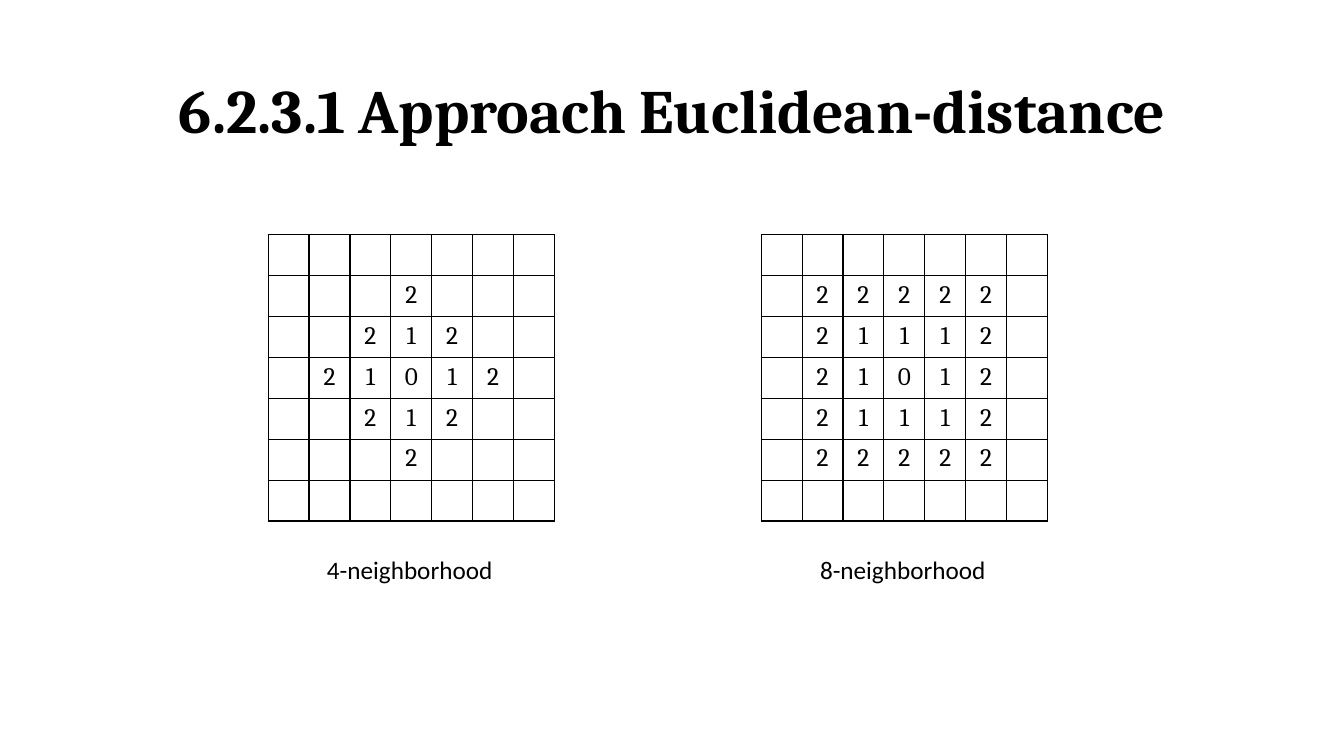
from lxml.etree import SubElement
from pptx import Presentation
from pptx.dml.color import RGBColor
from pptx.enum.text import MSO_ANCHOR, PP_ALIGN
from pptx.oxml.ns import qn
from pptx.util import Inches, Pt

TITLE = "6.2.3.1 Approach Euclidean-distance"
# One string per row, one sign per cell; a dot is an empty cell.
GRIDS = [
    ("4-neighborhood", 2.66, [
        ".......",
        "...2...",
        "..212..",
        ".21012.",
        "..212..",
        "...2...",
        ".......",
    ]),
    ("8-neighborhood", 7.55, [
        ".......",
        ".22222.",
        ".21112.",
        ".21012.",
        ".21112.",
        ".22222.",
        ".......",
    ]),
]
COLORS = {"ink": "000000", "back": "FFFFFF"}
TOP, SIDE = 2.33, 2.84
LABEL_W, LABEL_H, LABEL_GAP = 1.87, 0.4, 0.28


def style(para, font, size, bold=False):
    for run in para.runs:
        run.font.name = font
        run.font.size = Pt(size)
        run.font.bold = bold
        run.font.color.rgb = RGBColor.from_string(COLORS["ink"])


def frame(cell):
    """Give the cell a thin line on all four sides and no fill."""
    props = cell._tc.get_or_add_tcPr()
    for side in ("a:lnL", "a:lnR", "a:lnT", "a:lnB"):
        line = SubElement(props, qn(side), w=str(Pt(1)))
        fill = SubElement(line, qn("a:solidFill"))
        SubElement(fill, qn("a:srgbClr"), val=COLORS["ink"])
    cell.fill.background()


def add_grid(slide, left, rows):
    count = len(rows)
    table = slide.shapes.add_table(
        count, count, Inches(left), Inches(TOP), Inches(SIDE), Inches(SIDE)).table
    table.first_row = table.horz_banding = False
    for r, row in enumerate(rows):
        for c, sign in enumerate(row):
            cell = table.cell(r, c)
            frame(cell)
            if sign != ".":
                cell.text_frame.text = sign
                para = cell.text_frame.paragraphs[0]
                para.alignment = PP_ALIGN.CENTER
                style(para, "Cambria", 18)


def add_label(slide, left, text):
    box = slide.shapes.add_textbox(
        Inches(left + (SIDE - LABEL_W) / 2), Inches(TOP + SIDE + LABEL_GAP),
        Inches(LABEL_W), Inches(LABEL_H))
    box.text_frame.text = text
    style(box.text_frame.paragraphs[0], "Calibri", 18)


def main():
    deck = Presentation()
    deck.slide_width, deck.slide_height = Inches(13.33), Inches(7.5)
    slide = deck.slides.add_slide(deck.slide_layouts.get_by_name("Title Only"))
    slide.background.fill.solid()
    slide.background.fill.fore_color.rgb = RGBColor.from_string(COLORS["back"])

    title = slide.shapes.title
    title.left, title.top = Inches(0.92), Inches(0.4)
    title.width, title.height = Inches(11.5), Inches(1.45)
    title.text_frame.text = TITLE
    title.text_frame.vertical_anchor = MSO_ANCHOR.MIDDLE
    para = title.text_frame.paragraphs[0]
    para.alignment = PP_ALIGN.CENTER
    para.line_spacing = 0.9
    style(para, "Cambria", 44, bold=True)

    for name, left, rows in GRIDS:
        add_grid(slide, left, rows)
        add_label(slide, left, name)
    deck.save("out.pptx")


if __name__ == "__main__":
    main()
